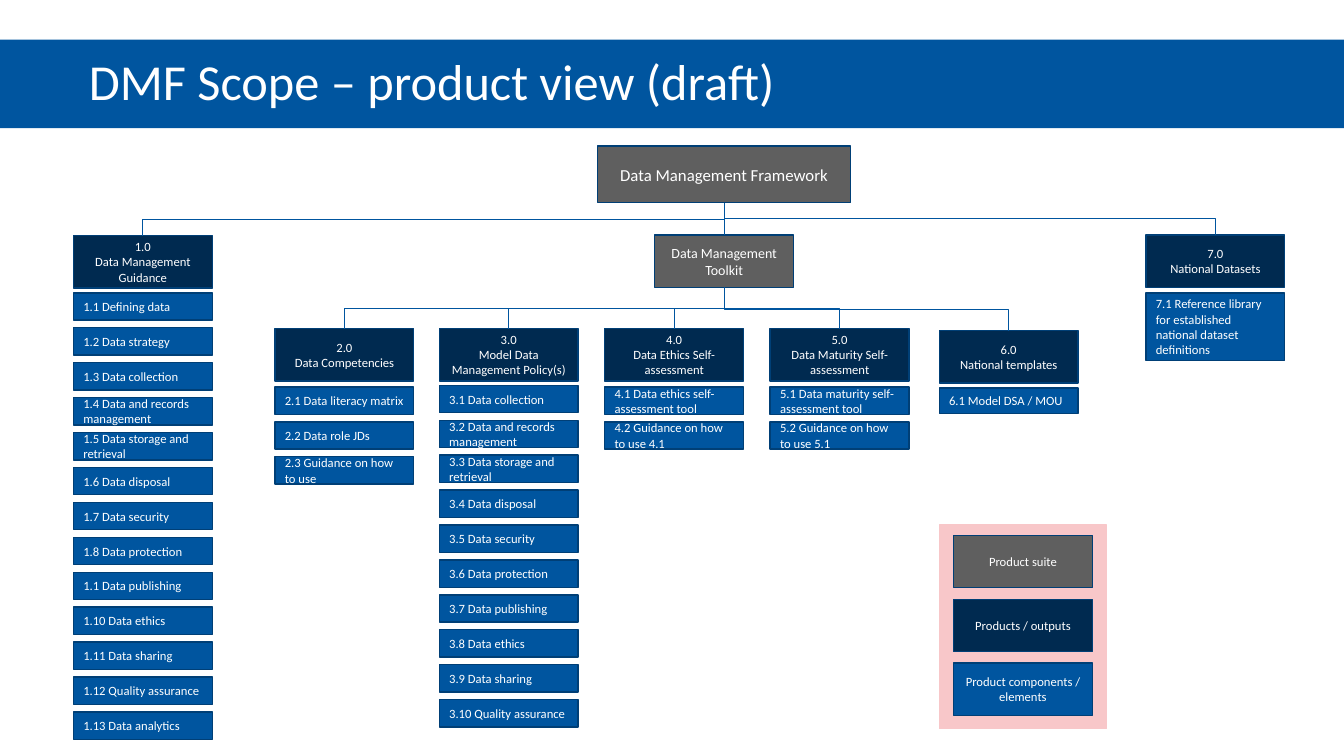
from pptx import Presentation
from pptx import util as u
from pptx.dml import color
from pptx.enum import shapes, text
from pptx.oxml import ns, xmlchemy

BLUE, NAVY, GREY = "00559F", "002A50", "5F5F5F"
EDGE, PINK, WHITE = "003F76", "F8C7C9", "FFFFFF"
BOX_WIDTH, HEADING_HEIGHT = 3.5, 1.32
ITEM_HEIGHT, ITEM_PITCH = 0.69, 0.88

GUIDANCE = [
    "1.1 Defining data", "1.2 Data strategy", "1.3 Data collection",
    "1.4 Data and records management", "1.5 Data storage and retrieval",
    "1.6 Data disposal", "1.7 Data security", "1.8 Data protection",
    "1.1 Data publishing", "1.10 Data ethics", "1.11 Data sharing",
    "1.12 Quality assurance", "1.13 Data analytics",
]
COMPETENCIES = ["2.1 Data literacy matrix", "2.2 Data role JDs", "2.3 Guidance on how to use"]
POLICIES = [
    "3.1 Data collection", "3.2 Data and records management",
    "3.3 Data storage and retrieval", "3.4 Data disposal", "3.5 Data security",
    "3.6 Data protection", "3.7 Data publishing", "3.8 Data ethics",
    "3.9 Data sharing", "3.10 Quality assurance",
]
ETHICS = ["4.1 Data ethics self-assessment tool", "4.2 Guidance on how to use 4.1"]
MATURITY = ["5.1 Data maturity self-assessment tool", "5.2 Guidance on how to use 5.1"]
TEMPLATES = ["6.1 Model DSA / MOU"]
DATASETS = ["7.1 Reference library for established national dataset definitions"]

FRAMEWORK_PRODUCTS = [
    (1.85, 5.94, "1.0\nData Management Guidance", 7.38, ITEM_HEIGHT, GUIDANCE),
    (28.88, 5.92, "7.0\nNational Datasets", 7.38, 1.7, DATASETS),
]
TOOLKIT_PRODUCTS = [
    (6.93, 8.28, "2.0\nData Competencies", 9.75, ITEM_HEIGHT, COMPETENCIES),
    (11.07, 8.28, "3.0\nModel Data Management Policy(s)", 9.71, ITEM_HEIGHT, POLICIES),
    (15.24, 8.28, "4.0\nData Ethics Self-assessment", 9.75, ITEM_HEIGHT, ETHICS),
    (19.41, 8.28, "5.0\nData Maturity Self-assessment", 9.75, ITEM_HEIGHT, MATURITY),
    (23.67, 8.33, "6.0\nNational templates", 9.78, 0.64, TEMPLATES),
]
LEGEND = [
    ("Product suite", GREY),
    ("Products / outputs", NAVY),
    ("Product components / elements", BLUE),
]


def rgb(value):
    return color.RGBColor.from_string(value)


def add_box(slide, left, top, width, height, fill, wording="", size=9,
            align=text.PP_ALIGN.CENTER, edge=EDGE):
    box = slide.shapes.add_shape(
        shapes.MSO_SHAPE.RECTANGLE, u.Cm(left), u.Cm(top), u.Cm(width), u.Cm(height))
    box.shadow.inherit = False
    box.fill.solid()
    box.fill.fore_color.rgb = rgb(fill)
    box.line.color.rgb = rgb(edge)
    box.line.width = u.Pt(1)
    frame = box.text_frame
    frame.word_wrap = True
    frame.vertical_anchor = text.MSO_ANCHOR.MIDDLE
    frame.text = wording
    for paragraph in frame.paragraphs:
        paragraph.alignment = align
        paragraph.font.name = "Calibri"
        paragraph.font.size = u.Pt(size)
        paragraph.font.color.rgb = rgb(WHITE)
    return box


def add_title(slide, wording):
    banner = add_box(slide, 0, 1, 33.87, 2.23, BLUE, wording, 36, text.PP_ALIGN.LEFT)
    banner.line.fill.background()
    banner.text_frame.margin_left = u.Cm(2.24)
    banner.text_frame.paragraphs[0].line_spacing = 0.9


def add_branch(slide, parent, child):
    straight = abs(parent.left + parent.width // 2 - child.left - child.width // 2) < u.Cm(0.02)
    kind = shapes.MSO_CONNECTOR.STRAIGHT if straight else shapes.MSO_CONNECTOR.ELBOW
    branch = slide.shapes.add_connector(kind, 0, 0, 0, 0)
    branch.begin_connect(parent, 2)
    branch.end_connect(child, 0)
    branch.line.color.rgb = rgb(BLUE)
    branch.line.width = u.Pt(0.5)
    properties = branch.element.spPr
    properties.append(xmlchemy.OxmlElement("a:effectLst"))
    if not straight:
        turn_downwards(branch, properties.find(ns.qn("a:xfrm")))


def turn_downwards(branch, transform):
    start_x, start_y = branch.begin_x, branch.begin_y
    run, drop = branch.end_x - start_x, branch.end_y - start_y
    branch.width, branch.height = drop, abs(run)
    branch.left = start_x + (run - drop) // 2
    branch.top = start_y + (drop - abs(run)) // 2
    transform.set("rot", str((270 if run > 0 else 90) * 60000))
    transform.set("flipH", "1" if run > 0 else "0")
    transform.set("flipV", "0")


def add_product(slide, parent, left, top, heading, first_item, item_height, items):
    product = add_box(slide, left, top, BOX_WIDTH, HEADING_HEIGHT, NAVY, heading)
    add_branch(slide, parent, product)
    for row, item in enumerate(items):
        add_box(slide, left, first_item + row * ITEM_PITCH, BOX_WIDTH, item_height,
                BLUE, item, align=text.PP_ALIGN.LEFT)


def add_legend(slide):
    add_box(slide, 23.67, 13.23, 4.22, 5.13, PINK, edge=PINK)
    for row, (label, fill) in enumerate(LEGEND):
        add_box(slide, 24.03, 13.49 + row * 1.61, BOX_WIDTH, HEADING_HEIGHT, fill, label)


def main():
    deck = Presentation()
    deck.slide_width, deck.slide_height = u.Cm(33.87), u.Cm(19.05)
    slide = deck.slides.add_slide(deck.slide_layouts[6])
    add_title(slide, "DMF Scope – product view (draft)")
    framework = add_box(slide, 15.06, 3.68, 6.38, 1.43, GREY, "Data Management Framework", 12)
    toolkit = add_box(slide, 16.5, 5.92, BOX_WIDTH, HEADING_HEIGHT, GREY,
                      "Data Management Toolkit", 10)
    add_branch(slide, framework, toolkit)
    for parent, products in ((framework, FRAMEWORK_PRODUCTS), (toolkit, TOOLKIT_PRODUCTS)):
        for product in products:
            add_product(slide, parent, *product)
    add_legend(slide)
    deck.save("out.pptx")


if __name__ == "__main__":
    main()
